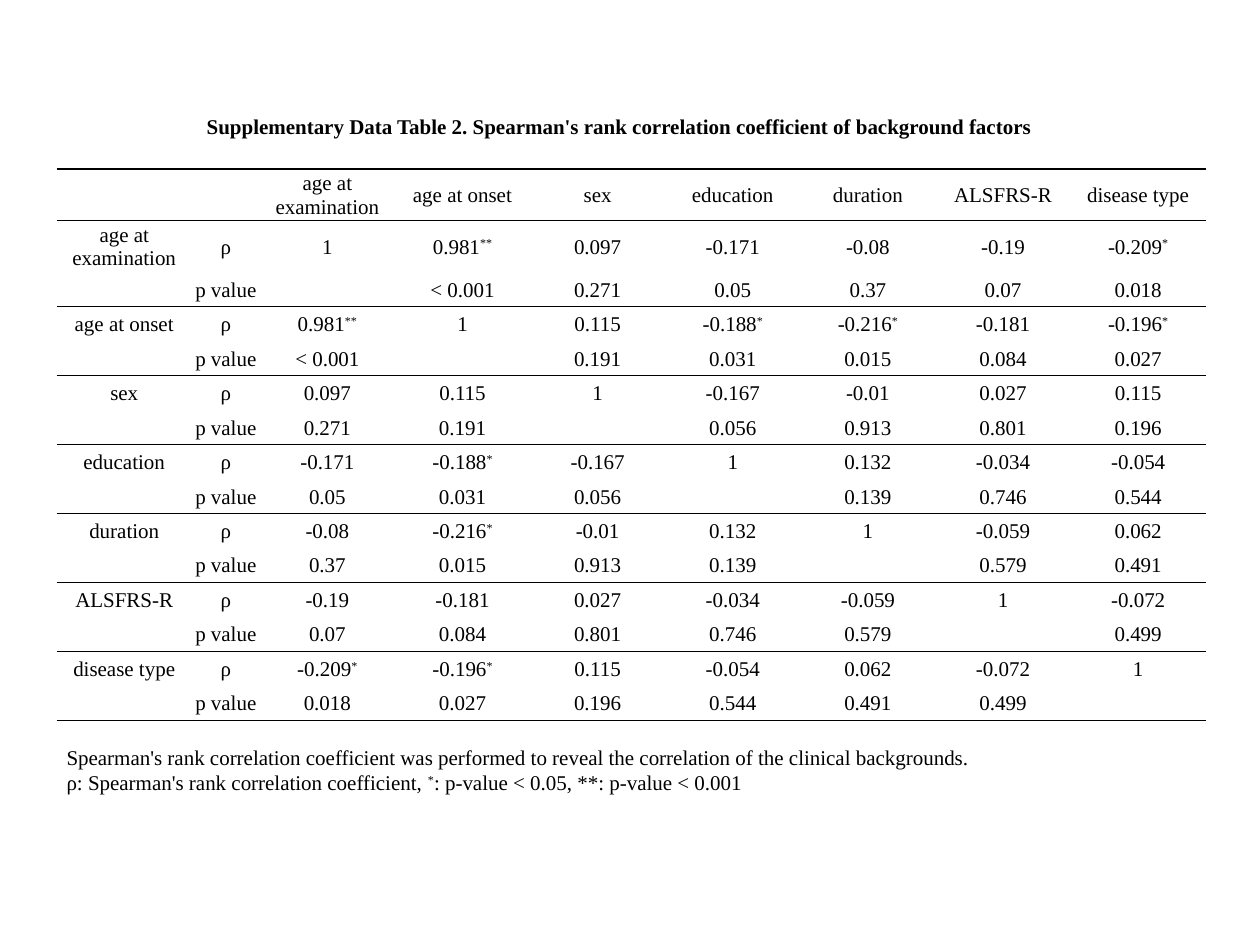
from typing import NamedTuple

from lxml.etree import SubElement
from pptx import Presentation
from pptx.dml.color import RGBColor
from pptx.enum.text import MSO_ANCHOR, MSO_AUTO_SIZE, PP_ALIGN
from pptx.oxml.ns import qn
from pptx.util import Inches, Pt

BLACK = RGBColor(0x00, 0x00, 0x00)
FONT = "Times New Roman"
SIZE = Pt(12)
NO_STYLE_NO_GRID = "{2D5ABB26-0587-4C30-8999-92F81FD0307C}"


class Span(NamedTuple):
    text: str
    raised: bool = False


class Correlation(NamedTuple):
    rho: str
    p_value: str
    stars: str = ""


FACTORS = ["age at examination", "age at onset", "sex", "education",
           "duration", "ALSFRS-R", "disease type"]

# For each factor, its correlations with the factors that come after it.
UPPER_TRIANGLE = [
    [Correlation("0.981", "< 0.001", "**"), Correlation("0.097", "0.271"),
     Correlation("-0.171", "0.05"), Correlation("-0.08", "0.37"),
     Correlation("-0.19", "0.07"), Correlation("-0.209", "0.018", "*")],
    [Correlation("0.115", "0.191"), Correlation("-0.188", "0.031", "*"),
     Correlation("-0.216", "0.015", "*"), Correlation("-0.181", "0.084"),
     Correlation("-0.196", "0.027", "*")],
    [Correlation("-0.167", "0.056"), Correlation("-0.01", "0.913"),
     Correlation("0.027", "0.801"), Correlation("0.115", "0.196")],
    [Correlation("0.132", "0.139"), Correlation("-0.034", "0.746"),
     Correlation("-0.054", "0.544")],
    [Correlation("-0.059", "0.579"), Correlation("0.062", "0.491")],
    [Correlation("-0.072", "0.499")],
]

TITLE = ("Supplementary Data Table 2. Spearman's rank correlation "
         "coefficient of background factors")
NOTES = [
    [Span("Spearman's rank correlation coefficient was performed to reveal "
          "the correlation of the clinical backgrounds.")],
    [Span("ρ: Spearman's rank correlation coefficient, "), Span("*", True),
     Span(": p-value < 0.05, **: p-value < 0.001")],
]


def correlation(first: int, second: int) -> Correlation:
    if first == second:
        return Correlation("1", "")
    low, high = sorted((first, second))
    return UPPER_TRIANGLE[low][high - low - 1]


def table_rows() -> list[list[list[Span]]]:
    """Header row, then a ρ row and a p value row for each factor."""
    rows = [[[Span(label)] for label in ["", "", *FACTORS]]]
    for index, factor in enumerate(FACTORS):
        pairs = [correlation(index, other) for other in range(len(FACTORS))]
        rows.append([[Span(factor)], [Span("ρ")]]
                    + [[Span(pair.rho), Span(pair.stars, True)] for pair in pairs])
        rows.append([[Span("")], [Span("p value")]]
                    + [[Span(pair.p_value)] for pair in pairs])
    return rows


def write_spans(para, spans: list[Span], bold: bool = False) -> None:
    for span in spans:
        if not span.text:
            continue
        run = para.add_run()
        run.text = span.text
        run.font.name = FONT
        run.font.size = SIZE
        run.font.bold = bold
        run.font.color.rgb = BLACK
        if span.raised:
            run.font._element.set("baseline", "30000")
    if not para.runs:
        # An empty cell keeps the text size, so its row does not grow.
        SubElement(para._p, qn("a:endParaRPr")).set("sz", str(int(SIZE.pt * 100)))


def set_border(cell, side: str, width: Pt) -> None:
    line = SubElement(cell._tc.get_or_add_tcPr(), qn(f"a:{side}"), w=str(int(width)))
    fill = SubElement(line, qn("a:solidFill"))
    SubElement(fill, qn("a:srgbClr"), val=str(BLACK))


def add_title(page) -> None:
    title = page.shapes.title
    title.left, title.top = Inches(1.54), Inches(0.85)
    title.width, title.height = Inches(6.87), Inches(0.3)
    frame = title.text_frame
    frame.word_wrap = False
    frame.auto_size = MSO_AUTO_SIZE.SHAPE_TO_FIT_TEXT
    frame.vertical_anchor = MSO_ANCHOR.TOP
    frame.paragraphs[0].alignment = PP_ALIGN.LEFT
    write_spans(frame.paragraphs[0], [Span(TITLE)], bold=True)


def add_correlation_table(page) -> None:
    rows = table_rows()
    width, height = Inches(9.12), Inches(4.38)
    label_width, tall_row = Inches(0.54), Inches(0.41)
    frame = page.shapes.add_table(len(rows), len(rows[0]), Inches(0.45),
                                  Inches(1.34), width, height)
    table = frame.table
    table.first_row = table.horz_banding = False
    table._tbl.tblPr.find(qn("a:tableStyleId")).text = NO_STYLE_NO_GRID

    for index, column in enumerate(table.columns):
        column.width = (label_width if index == 1
                        else (width - label_width) // (len(rows[0]) - 1))
    for index, row in enumerate(table.rows):
        row.height = (tall_row if index < 2
                      else (height - 2 * tall_row) // (len(rows) - 2))

    for row_index, row in enumerate(rows):
        for column_index, spans in enumerate(row):
            cell = table.cell(row_index, column_index)
            cell.margin_left = cell.margin_right = cell.margin_top = Inches(0.01)
            cell.margin_bottom = 0
            cell.vertical_anchor = MSO_ANCHOR.MIDDLE
            para = cell.text_frame.paragraphs[0]
            para.alignment = PP_ALIGN.CENTER
            write_spans(para, spans)
            if row_index == 0:
                set_border(cell, "lnT", Pt(1))
            if row_index % 2 == 0:
                set_border(cell, "lnB", Pt(0.5))
            cell.fill.background()


def add_notes_below_table(page) -> None:
    box = page.shapes.add_textbox(Inches(0.43), Inches(5.86), Inches(9.13), Inches(0.5))
    frame = box.text_frame
    frame.word_wrap = True
    frame.auto_size = MSO_AUTO_SIZE.SHAPE_TO_FIT_TEXT
    for index, spans in enumerate(NOTES):
        para = frame.add_paragraph() if index else frame.paragraphs[0]
        write_spans(para, spans)


def main() -> None:
    deck = Presentation()
    deck.slide_width, deck.slide_height = Inches(10), Inches(7.5)
    title_only = deck.slide_layouts[5]
    page = deck.slides.add_slide(title_only)
    add_title(page)
    add_correlation_table(page)
    add_notes_below_table(page)
    deck.save("out.pptx")


if __name__ == "__main__":
    main()
